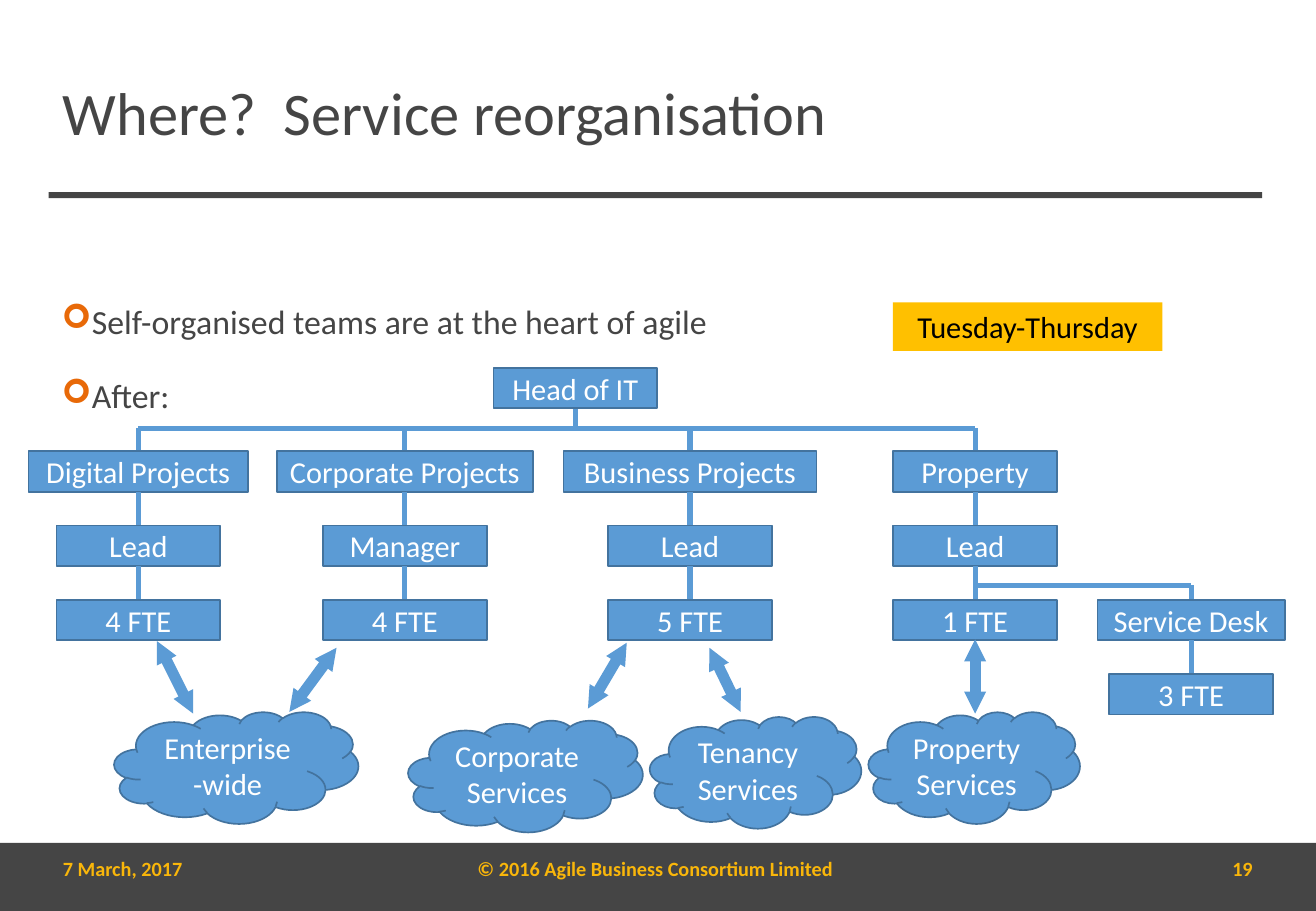
from lxml import etree
from pptx import Presentation
from pptx.dml.color import RGBColor
from pptx.enum.shapes import MSO_CONNECTOR, MSO_SHAPE
from pptx.enum.text import MSO_ANCHOR, PP_ALIGN
from pptx.oxml.ns import qn
from pptx.util import Pt

RECTANGLE, CLOUD = MSO_SHAPE.RECTANGLE, MSO_SHAPE.CLOUD
STRAIGHT = MSO_CONNECTOR.STRAIGHT
TOP, MIDDLE = MSO_ANCHOR.TOP, MSO_ANCHOR.MIDDLE
LEFT, CENTER, RIGHT = PP_ALIGN.LEFT, PP_ALIGN.CENTER, PP_ALIGN.RIGHT

THEME = {
    "font": "Calibri",
    "dark": "454545", "gold": "F9B60A", "bullet": "E86908",
    "blue": "5B9BD5", "outline": "43739E",
    "white": "FFFFFF", "amber": "FFC000", "black": "000000",
    "title": 35.8, "body": 20, "label": 18, "footer": 12,
    "border": 1, "link": 3, "arrow": 6.5,
}

TITLE = "Where?  Service reorganisation"
BULLETS = ["Self-organised teams are at the heart of agile", "After:"]
SCHEDULE = "Tuesday-Thursday"
HEAD = "Head of IT"
TEAMS = [
    (82, 130, ["Digital Projects", "Lead", "4 FTE"]),
    (240, 152, ["Corporate Projects", "Manager", "4 FTE"]),
    (409, 150, ["Business Projects", "Lead", "5 FTE"]),
    (578, 97, ["Property", "Lead", "1 FTE"]),
]
DESK = (706, 111, ["Service Desk", "3 FTE"])
CLOUDS = [
    ("Enterprise-wide", 67.7, 422, 144.7),
    ("Corporate Services", 242, 427, 139),
    ("Tenancy Services", 385.2, 424.8, 125.3),
    ("Property Services", 514.8, 422, 125.3),
]
ARROWS = [
    (93, 380, 114.5, 423), (199.5, 384, 171.5, 422),
    (371.5, 381, 348.5, 420), (420.5, 384, 439, 422),
    (578, 379, 578, 423),
]
FOOTER = [
    ("7 March, 2017", 30.2, 182.2, LEFT),
    ("© 2016 Agile Business Consortium Limited", 265, 247, CENTER),
    ("19", 567.4, 182.2, RIGHT),
]

HEAD_CENTER, HEAD_TOP, BUS_Y = 341, 218, 254
ROW_TOP, ROW_STEP = 267.5, 44
BOX_WIDTH, BOX_HEIGHT, CLOUD_HEIGHT = 97, 24, 66.2
BRANCH_Y = 347


def color(name):
    return RGBColor.from_string(THEME[name])


def apply(target, values):
    for name, value in values.items():
        setattr(target, name, value)


def write(shape, lines, size, ink, align=CENTER, anchor=MIDDLE, bold=False,
          spacing=1.0, before=0, bullet=None):
    frame = shape.text_frame
    apply(frame, {"word_wrap": True, "vertical_anchor": anchor})
    for index, line in enumerate(lines):
        paragraph = frame.paragraphs[0] if index == 0 else frame.add_paragraph()
        apply(paragraph, {"text": line, "alignment": align, "line_spacing": spacing,
                          "space_before": Pt(before if index else 0)})
        if bullet:
            properties = paragraph._p.get_or_add_pPr()
            properties.set("marL", str(Pt(15)))
            properties.set("indent", str(-Pt(15)))
            tint = etree.SubElement(properties, qn("a:buClr"))
            etree.SubElement(tint, qn("a:srgbClr")).set("val", THEME["bullet"])
            etree.SubElement(properties, qn("a:buFont")).set("typeface", "Wingdings")
            etree.SubElement(properties, qn("a:buChar")).set("char", bullet)
        apply(paragraph.font, {"name": THEME["font"], "size": Pt(THEME[size]), "bold": bold})
        paragraph.font.color.rgb = color(ink)


def add_text(slide, bounds, lines, size, ink, **options):
    write(slide.shapes.add_textbox(*map(Pt, bounds)), lines, size, ink, **options)


def add_block(slide, kind, bounds, fill, outline=None, text=None, ink="white", **options):
    shape = slide.shapes.add_shape(kind, *map(Pt, bounds))
    shape.shadow.inherit = False
    shape.fill.solid()
    shape.fill.fore_color.rgb = color(fill)
    if outline:
        shape.line.color.rgb = color(outline)
        shape.line.width = Pt(THEME["border"])
    else:
        shape.line.fill.background()
    if text:
        write(shape, [text], "label", ink, **options)


def add_link(slide, points, width="link", arrows=False):
    connector = slide.shapes.add_connector(STRAIGHT, *map(Pt, points))
    connector.line.color.rgb = color("blue")
    connector.line.width = Pt(THEME[width])
    if arrows:
        for end in ("a:headEnd", "a:tailEnd"):
            tip = etree.SubElement(connector.line._get_or_add_ln(), qn(end))
            for name, value in {"type": "triangle", "w": "sm", "len": "sm"}.items():
                tip.set(name, value)
    etree.SubElement(connector._element.spPr, qn("a:effectLst"))


def add_box(slide, center, top, width, text):
    add_block(slide, RECTANGLE, (center - width / 2, top, width, BOX_HEIGHT),
              "blue", "outline", text)


def add_team(slide, center, first_width, labels, start_row, feed_y):
    for index, label in enumerate(labels):
        top = ROW_TOP + (start_row + index) * ROW_STEP
        add_link(slide, (center, feed_y, center, top))
        add_box(slide, center, top, BOX_WIDTH if index else first_width, label)
        feed_y = top + BOX_HEIGHT


def add_frame(slide):
    add_block(slide, RECTANGLE, (0, 499.7, 780, 40.3), "dark")
    add_block(slide, RECTANGLE, (28.8, 113.8, 719.3, 3.6), "dark")
    add_text(slide, (30.2, 28.8, 566.6, 80), [TITLE], "title", "dark",
             align=LEFT, spacing=0.9)
    add_text(slide, (29.5, 162.7, 666.7, 327), BULLETS, "body", "dark", align=LEFT,
             anchor=TOP, spacing=1.5, before=8.1, bullet="➢")
    for text, left, width, align in FOOTER:
        add_text(slide, (left, 500.4, width, 28.8), [text], "footer", "gold",
                 align=align, bold=True)


def add_organisation(slide):
    add_link(slide, (TEAMS[0][0], BUS_Y, TEAMS[-1][0], BUS_Y))
    add_link(slide, (HEAD_CENTER, HEAD_TOP + BOX_HEIGHT, HEAD_CENTER, BUS_Y))
    add_box(slide, HEAD_CENTER, HEAD_TOP, BOX_WIDTH, HEAD)
    for center, width, labels in TEAMS:
        add_team(slide, center, width, labels, 0, BUS_Y)
    add_link(slide, (TEAMS[-1][0], BRANCH_Y, DESK[0], BRANCH_Y))
    add_team(slide, *DESK, 2, BRANCH_Y)
    for text, left, top, width in CLOUDS:
        add_block(slide, CLOUD, (left, top, width, CLOUD_HEIGHT), "blue", "outline", text)
    for points in ARROWS:
        add_link(slide, points, "arrow", arrows=True)
    add_block(slide, RECTANGLE, (529.2, 179.3, 159.8, 28.8), "amber",
              text=SCHEDULE, ink="black", anchor=TOP)


def main():
    presentation = Presentation()
    apply(presentation, {"slide_width": Pt(780), "slide_height": Pt(540)})
    slide = presentation.slides.add_slide(presentation.slide_layouts[6])
    add_frame(slide)
    add_organisation(slide)
    presentation.save("out.pptx")


if __name__ == "__main__":
    main()
